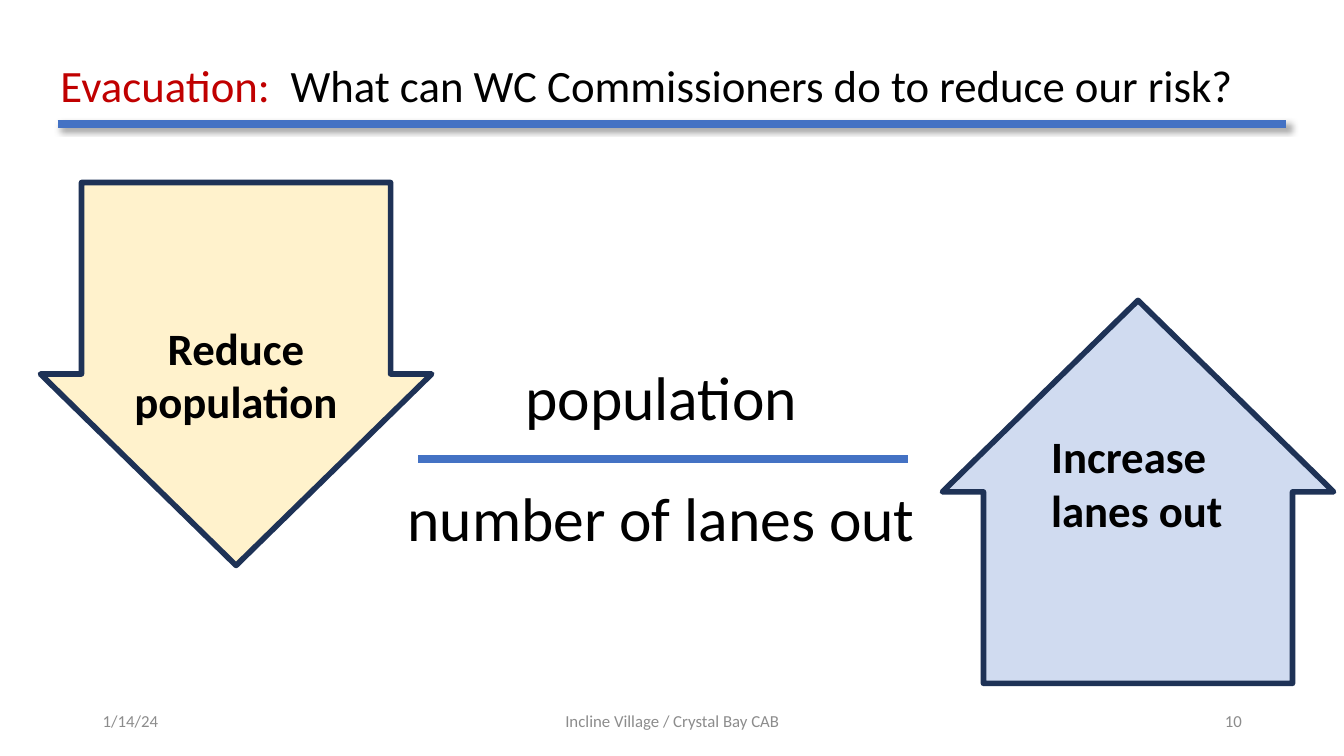
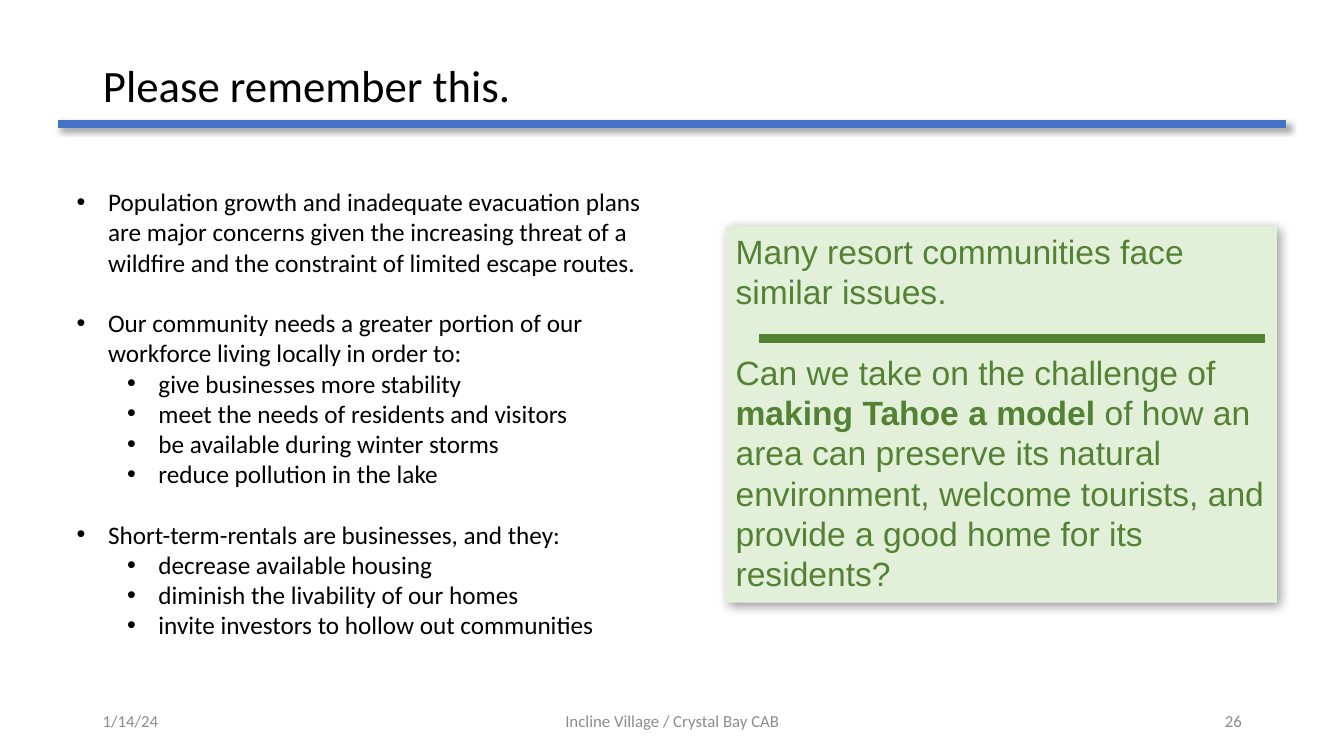
"""Builds two evacuation and community slides that share a title style, rule and footer."""
import lxml.etree
import pptx
import pptx.dml.color
import pptx.enum.shapes
import pptx.enum.text
import pptx.oxml.ns
import pptx.util

Cm = pptx.util.Cm
Pt = pptx.util.Pt
ALIGN = pptx.enum.text.PP_ALIGN
ANCHOR = pptx.enum.text.MSO_ANCHOR
SHAPE = pptx.enum.shapes.MSO_SHAPE

BLUE, NAVY, RED, BLACK, GREY = "4472C4", "1E3256", "C00000", "000000", "8C8C8C"
CREAM, PALE_GREEN, GREEN = "FFF2CC", "E2F0D9", "548235"
DATE, MEETING = "1/14/24", "Incline Village / Crystal Bay CAB"


def colour(value):
    """Turn a hex string into a colour."""
    return pptx.dml.color.RGBColor.from_string(value)


def apply(target, values):
    """Set each named attribute of the target."""
    for name, value in values.items():
        setattr(target, name, value)


def add_xml(parent, tag, **attributes):
    """Append a drawing element and return it."""
    return lxml.etree.SubElement(parent, pptx.oxml.ns.qn(tag), attributes)


def add_effects(shape, blur=None):
    """Give a shape a soft shadow, or none at all without a blur."""
    effects = add_xml(shape.element.spPr, "a:effectLst")
    if blur:
        shadow = add_xml(effects, "a:outerShdw", blurRad=str(Pt(blur)), dist=str(Pt(3)),
                         dir="2700000", algn="tl", rotWithShape="0")
        tint = add_xml(shadow, "a:srgbClr", val=BLACK)
        add_xml(tint, "a:alpha", val="40000")


def write(frame, paragraphs, size, hue=BLACK, font="Calibri", bold=False, spacing=None,
          align=ALIGN.LEFT, **frame_format):
    """Fill a frame with paragraphs, each a list of text and run format pairs."""
    apply(frame, {"word_wrap": True, "auto_size": pptx.enum.text.MSO_AUTO_SIZE.NONE,
                  "vertical_anchor": ANCHOR.TOP, **frame_format})
    for index, runs in enumerate(paragraphs):
        paragraph = frame.add_paragraph() if index else frame.paragraphs[0]
        apply(paragraph, {"alignment": align, "line_spacing": spacing or Pt(1.2 * size),
                          "space_before": Pt(0)})
        for text, changes in runs:
            values = {"hue": hue, "bold": bold, **changes}
            run = paragraph.add_run()
            run.text = text
            run.font.color.rgb = colour(values.pop("hue"))
            apply(run.font, {"size": Pt(size), "name": font, **values})


def add_label(slide, box, lines, size, **style):
    """Place plain lines of text in a box."""
    label = slide.shapes.add_textbox(*map(Cm, box))
    write(label.text_frame, [[(line, {})] for line in lines], size, **style)


def add_bar(slide, left, right, y, hue, width, blur=None):
    """Draw a horizontal bar."""
    bar = slide.shapes.add_connector(pptx.enum.shapes.MSO_CONNECTOR.STRAIGHT,
                                     Cm(left), Cm(y), Cm(right), Cm(y))
    bar.line.color.rgb = colour(hue)
    bar.line.width = Pt(width)
    add_effects(bar, blur)


def start_slide(deck, layout, title_runs, title_left, number):
    """Add a slide with its title, rule and footer."""
    slide = deck.slides.add_slide(deck.slide_layouts[layout])
    add_bar(slide, 1.45, 32.41, 3.12, BLUE, 5.5, blur=4)
    title = slide.shapes.title
    apply(title, {"left": Cm(title_left), "top": Cm(0.38),
                  "width": Cm(33.87 - 2 * title_left), "height": Cm(3.68)})
    write(title.text_frame, [title_runs], 32, spacing=0.9, vertical_anchor=ANCHOR.MIDDLE)
    footer = ((2.34, 7.62, DATE, ALIGN.LEFT), (11.23, 11.43, MEETING, ALIGN.CENTER),
              (23.93, 7.62, number, ALIGN.RIGHT))
    for left, width, text, align in footer:
        add_label(slide, (left, 17.65, width, 1.02), [text], 12, hue=GREY, align=align,
                  vertical_anchor=ANCHOR.MIDDLE)
    return slide


def add_action_arrow(slide, left, top, direction, fill, lines, label_width, align,
                     opacity=None, rise=0):
    """Draw a block arrow with a bold label about its middle."""
    width, height, label_height = 9.86, 9.65, 3
    arrow = slide.shapes.add_shape(direction, Cm(left), Cm(top), Cm(width), Cm(height))
    arrow.adjustments[0], arrow.adjustments[1] = 0.79, 0.5
    arrow.fill.solid()
    arrow.fill.fore_color.rgb = colour(fill)
    if opacity:
        tint = arrow.element.spPr.find(".//" + pptx.oxml.ns.qn("a:srgbClr"))
        add_xml(tint, "a:alpha", val=str(opacity * 1000))
    arrow.line.color.rgb = colour(NAVY)
    arrow.line.width = Pt(4)
    arrow.shadow.inherit = False
    label_box = (left + (width - label_width) / 2, top + (height - label_height) / 2 - rise,
                 label_width, label_height)
    add_label(slide, label_box, lines, 32, bold=True, align=align,
              vertical_anchor=ANCHOR.MIDDLE)


def add_fraction(slide, left, top, width, numerator, denominator):
    """Set one term over another with a bar between."""
    for text, offset in ((numerator, 0), (denominator, 3.05)):
        add_label(slide, (left, top + offset, width, 2.13), [text], 44, align=ALIGN.CENTER,
                  margin_left=0, margin_right=0)
    add_bar(slide, left + 0.54, left + width - 0.45, top + 2.64, BLUE, 6)


def add_points(placeholder, box, groups):
    """Fill the body with points and their subpoints, a gap before each later group."""
    apply(placeholder, dict(zip(("left", "top", "width", "height"), map(Cm, box))))
    entries = [(text, level, index > 0 and level == 0)
               for index, (point, subpoints) in enumerate(groups)
               for text, level in [(point, 0)] + [(sub, 1) for sub in subpoints]]
    frame = placeholder.text_frame
    write(frame, [[(text, {})] for text, _, _ in entries], 18)
    for paragraph, (_, level, gap) in zip(frame.paragraphs, entries):
        apply(paragraph, {"level": level, "space_before": Pt(21.6 if gap else 0)})
        properties = paragraph._p.get_or_add_pPr()
        properties.set("marL", str(Cm(0.79 + 1.27 * level)))
        properties.set("indent", str(Cm(-0.79)))
        add_xml(properties, "a:buFont", typeface="Arial")
        add_xml(properties, "a:buChar", char="•")


def add_challenge_card(slide, left, top, width, height, paragraphs):
    """Draw the green card with a bar between its two paragraphs."""
    card = slide.shapes.add_shape(SHAPE.RECTANGLE, Cm(left), Cm(top), Cm(width), Cm(height))
    card.fill.solid()
    card.fill.fore_color.rgb = colour(PALE_GREEN)
    card.line.fill.background()
    add_effects(card, blur=8)
    write(card.text_frame, paragraphs, 24, hue=GREEN, font="Arial")
    card.text_frame.paragraphs[1].space_before = Pt(28.8)
    add_bar(slide, left + 0.84, left + width - 0.3, top + 2.84, GREEN, 6)


def build_evacuation(deck):
    """Build the slide on population over lanes out."""
    title = [("Evacuation:  ", {"hue": RED}),
             ("What can WC Commissioners do to reduce our risk?", {})]
    slide = start_slide(deck, 5, title, 1.27, "10")
    add_fraction(slide, 10, 8.92, 13.34, "population", "number of lanes out")
    add_action_arrow(slide, 1.02, 4.6, SHAPE.DOWN_ARROW, CREAM, ["Reduce", "population"],
                     5.69, ALIGN.CENTER)
    add_action_arrow(slide, 23.75, 7.57, SHAPE.UP_ARROW, BLUE, ["Increase", "lanes out"],
                     4.88, ALIGN.LEFT, opacity=25, rise=0.23)


def build_reminder(deck):
    """Build the closing slide of points and a challenge."""
    slide = start_slide(deck, 1, [("Please remember this.", {})], 2.34, "26")
    add_points(slide.placeholders[1], (1.68, 4.57, 15.09, 12.57), [
        ("Population growth and inadequate evacuation plans are major concerns given the "
         "increasing threat of a wildfire and the constraint of limited escape routes.", []),
        ("Our community needs a greater portion of our workforce living locally in order to:",
         ["give businesses more stability", "meet the needs of residents and visitors",
          "be available during winter storms", "reduce pollution in the lake"]),
        ("Short-term-rentals are businesses, and they:",
         ["decrease available housing", "diminish the livability of our homes",
          "invite investors to hollow out communities"]),
    ])
    add_challenge_card(slide, 18.29, 5.69, 13.89, 9.5, [
        [("Many resort communities face similar issues.", {})],
        [("Can we take on the challenge of ", {}),
         ("making Tahoe a model ", {"bold": True}),
         ("of how an area can preserve its natural environment, welcome tourists, and "
          "provide a good home for its residents?", {})],
    ])


def main():
    """Build and save the deck."""
    deck = pptx.Presentation()
    apply(deck, {"slide_width": Cm(33.87), "slide_height": Cm(19.05)})
    build_evacuation(deck)
    build_reminder(deck)
    deck.save("out.pptx")


if __name__ == "__main__":
    main()
